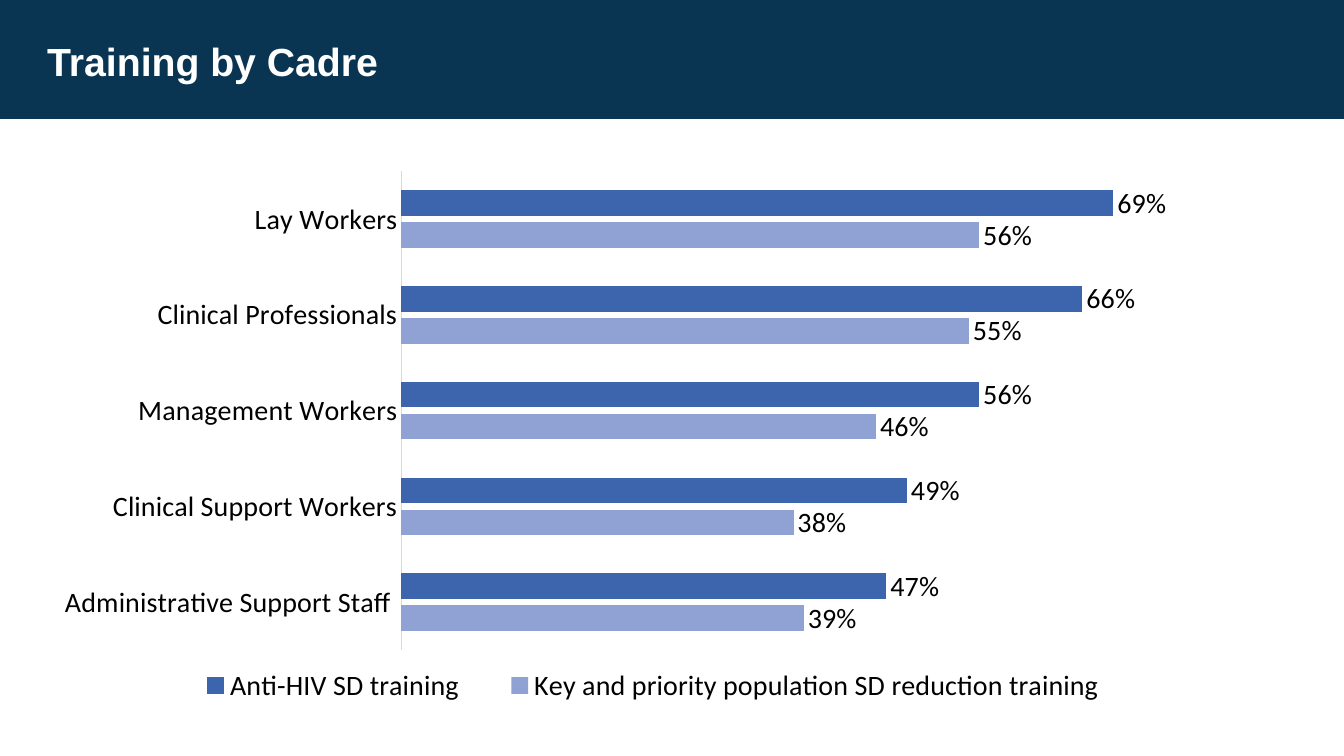
from lxml import etree
from pptx import Presentation
from pptx.chart.data import CategoryChartData
from pptx.dml.color import RGBColor
from pptx.enum.chart import XL_CHART_TYPE, XL_LABEL_POSITION, XL_LEGEND_POSITION, XL_TICK_MARK
from pptx.enum.shapes import MSO_SHAPE
from pptx.enum.text import MSO_ANCHOR
from pptx.oxml.ns import qn
from pptx.util import Inches, Pt

COLORS = {
    "navy": "093552",
    "white": "FFFFFF",
    "black": "000000",
    "line": "D9D9D9",
    "light": "90A2D3",
    "blue": "3C65AE",
}


def style(font, size, color="black", name="Calibri"):
    font.size = Pt(size)
    font.name = name
    font.color.rgb = RGBColor.from_string(COLORS[color])


def place(part, index, inner, box):
    for old in part.findall(qn("c:layout")):
        part.remove(old)
    layout = etree.Element(qn("c:layout"))
    manual = etree.SubElement(layout, qn("c:manualLayout"))
    items = [("layoutTarget", "inner")] if inner else []
    items += [("xMode", "edge"), ("yMode", "edge"), *zip("xywh", box)]
    for tag, val in items:
        etree.SubElement(manual, qn(f"c:{tag}")).set("val", str(val))
    part.insert(index, layout)


prs = Presentation()
prs.slide_width = Inches(13.33)
prs.slide_height = Inches(7.5)
slide = prs.slides.add_slide(prs.slide_layouts[6])

band = slide.shapes.add_shape(MSO_SHAPE.RECTANGLE, 0, 0, prs.slide_width, Inches(1.18))
band.shadow.inherit = False
band.fill.solid()
band.fill.fore_color.rgb = RGBColor.from_string(COLORS["navy"])
band.line.fill.background()

title = slide.shapes.add_textbox(Inches(0.37), Inches(0.37), Inches(12.04), Inches(0.8))
frame = title.text_frame
frame.word_wrap = True
frame.vertical_anchor = MSO_ANCHOR.TOP
head = frame.paragraphs[0]
head.text = "Training by Cadre"
head.line_spacing = 0.9
head.font.bold = True
style(head.font, 28, "white", "Arial")

data = CategoryChartData(number_format="0%")
data.categories = [
    "Administrative Support Staff ",
    "Clinical Support Workers",
    "Management Workers",
    "Clinical Professionals",
    "Lay Workers",
]
data.add_series("Key and priority population SD reduction training ", [0.39, 0.38, 0.46, 0.55, 0.56])
data.add_series("Anti-HIV SD training ", [0.47, 0.49, 0.56, 0.66, 0.69])
chart = slide.shapes.add_chart(
    XL_CHART_TYPE.BAR_CLUSTERED, Inches(0.37), Inches(1.59), Inches(12.04), Inches(5.46), data
).chart
chart.has_title = False
style(chart.font, 10)

plot = chart.plots[0]
plot.gap_width = 150
plot.overlap = -25
plot.vary_by_categories = False
for series, color in zip(plot.series, ["light", "blue"]):
    series.format.fill.solid()
    series.format.fill.fore_color.rgb = RGBColor.from_string(COLORS[color])
    labels = series.data_labels
    labels.show_value = True
    labels.number_format = "0%"
    labels.number_format_is_linked = False
    labels.position = XL_LABEL_POSITION.OUTSIDE_END
    style(labels.font, 20)

cats = chart.category_axis
cats.major_tick_mark = XL_TICK_MARK.NONE
cats.minor_tick_mark = XL_TICK_MARK.NONE
cats.has_major_gridlines = False
cats.format.line.width = Pt(0.75)
cats.format.line.color.rgb = RGBColor.from_string(COLORS["line"])
style(cats.tick_labels.font, 20)

vals = chart.value_axis
vals.visible = False
vals.has_major_gridlines = False
vals.minimum_scale = 0
vals.maximum_scale = 0.8
vals.tick_labels.number_format = "0%"
vals.tick_labels.number_format_is_linked = False

chart.has_legend = True
legend = chart.legend
legend.position = XL_LEGEND_POSITION.BOTTOM
legend.include_in_layout = False
style(legend.font, 20)
area = chart.element.find(".//" + qn("c:plotArea")) if hasattr(chart, "element") else chart._chartSpace.find(".//" + qn("c:plotArea"))
place(area, 0, True, (0.3, 0.02, 0.68, 0.87))
place(legend._element, 1, False, (0.11, 0.92, 0.8, 0.08))

prs.save("out.pptx")
